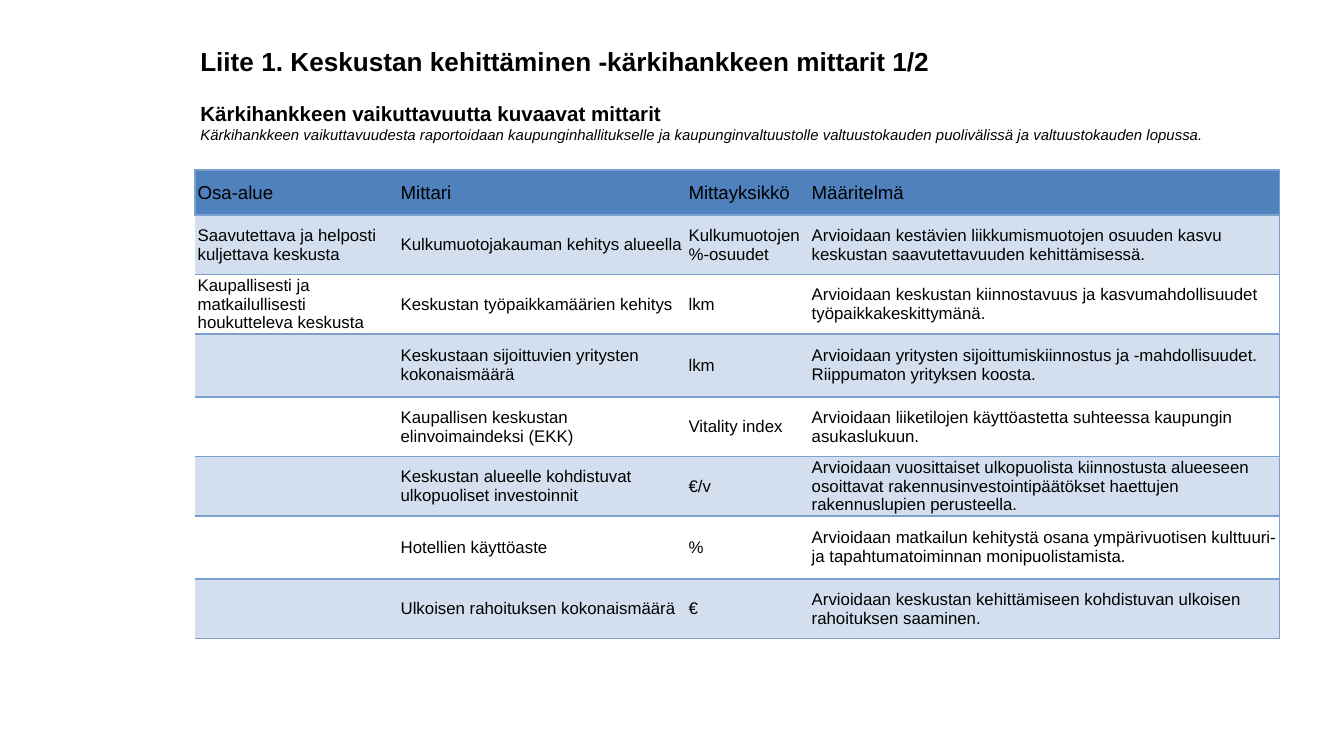
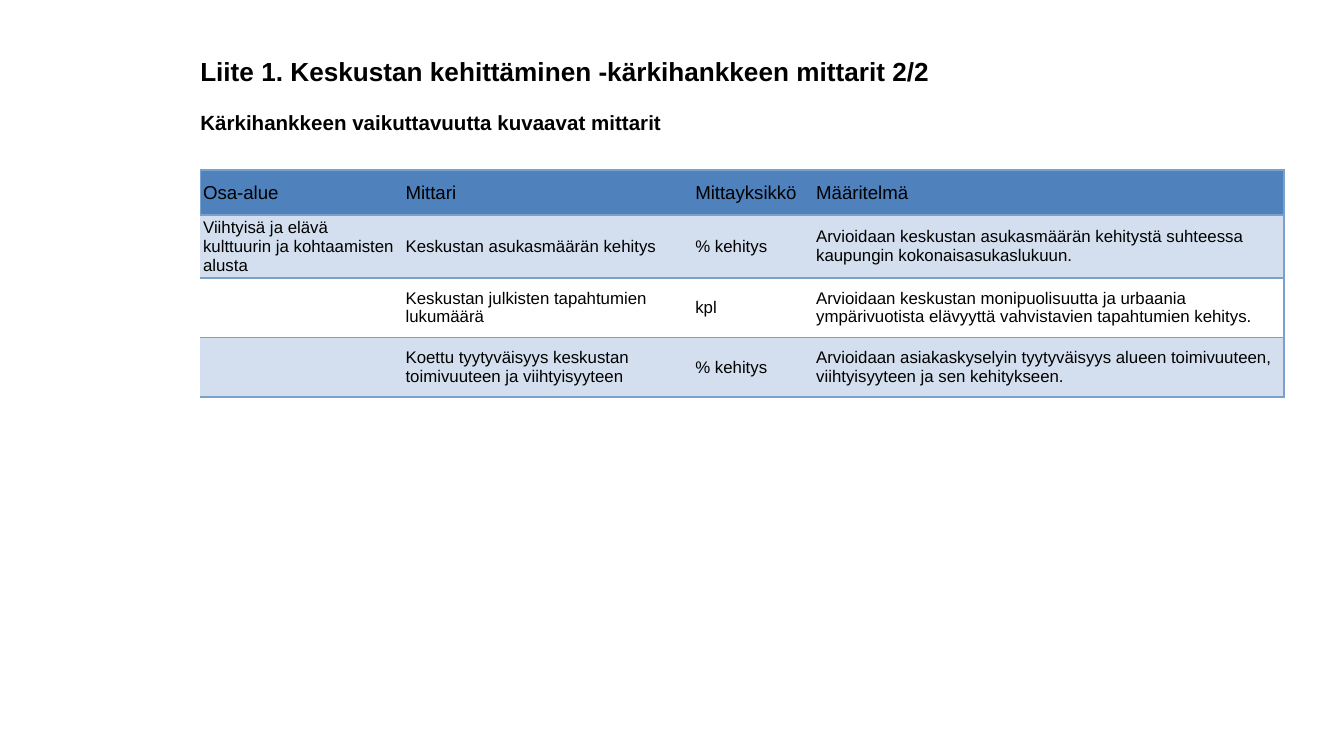
from pptx import Presentation
from pptx.dml.color import RGBColor
from pptx.enum.text import MSO_ANCHOR as Anchor, MSO_AUTO_SIZE as AutoSize, PP_ALIGN as Align
from pptx.oxml import parse_xml
from pptx.oxml.ns import nsdecls
from pptx.util import Pt

BLACK = RGBColor(0x00, 0x00, 0x00)
HEADER_BLUE = RGBColor(0x4F, 0x81, 0xBD)
BAND_BLUE = RGBColor(0xD3, 0xDF, 0xEE)
BORDER_BLUE = RGBColor(0x7B, 0xA0, 0xCD)

FONT = "Arial"
TITLE_FORMAT = {"size": Pt(14), "bold": True, "italic": False}
SUBTITLE_FORMAT = {"size": Pt(11), "bold": True, "italic": False}
NOTE_FORMAT = {"size": Pt(8), "bold": False, "italic": True}
HEADER_FORMAT = {"size": Pt(10), "bold": False}
CELL_FORMAT = {"size": Pt(9), "bold": False}

HEADING_INSETS = {"margin_left": Pt(90), "margin_top": Pt(6.5),
                  "margin_right": Pt(5), "margin_bottom": Pt(5)}
CELL_INSETS = {"margin_left": Pt(1.4), "margin_top": Pt(0.5),
               "margin_right": Pt(1.4), "margin_bottom": Pt(0.5)}

SUBTITLE = "Kärkihankkeen vaikuttavuutta kuvaavat mittarit"
HEADERS = ["Osa-alue", "Mittari", "Mittayksikkö", "Määritelmä"]
TABLE_TOP = 91.2
HEADER_HEIGHT = 24
LOW_ROW = 31.9
HIGH_ROW = 33.75


def apply_format(target, values):
    for name, value in values.items():
        setattr(target, name, value)


class MetricsDeck:
    def __init__(self):
        self.presentation = Presentation()
        self.presentation.slide_width = Pt(720)
        self.presentation.slide_height = Pt(405)
        self.slide = None

    def add_slide(self):
        layout = self.presentation.slide_layouts.get_by_name("Title Only")
        self.slide = self.presentation.slides.add_slide(layout)

    def add_text(self, paragraph, text, values):
        paragraph.alignment = Align.LEFT
        run = paragraph.add_run()
        run.text = text
        apply_format(run.font, {"name": FONT, **values})
        run.font.color.rgb = BLACK

    def add_heading(self, top, width, height, lines):
        shape = self.slide.shapes.title
        apply_format(shape, {"left": Pt(17.3), "top": Pt(top),
                             "width": Pt(width), "height": Pt(height)})
        frame = shape.text_frame
        apply_format(frame, {"word_wrap": True, "auto_size": AutoSize.NONE,
                             "vertical_anchor": Anchor.TOP, **HEADING_INSETS})
        for index, (text, values) in enumerate(lines):
            paragraph = frame.add_paragraph() if index else frame.paragraphs[0]
            self.add_text(paragraph, text, values)
            if index == 1:
                paragraph.space_before = Pt(12.7)

    def add_borders(self, cell, visible_sides):
        properties = cell._tc.get_or_add_tcPr()
        for side in "LRTB":
            paint = (f'<a:solidFill><a:srgbClr val="{BORDER_BLUE}"/></a:solidFill>'
                     if side in visible_sides else "<a:noFill/>")
            properties.append(parse_xml(
                f'<a:ln{side} {nsdecls("a")} w="{Pt(1)}">{paint}</a:ln{side}>'))

    def add_metrics_table(self, left, column_widths, row_heights, metrics):
        heights = [HEADER_HEIGHT, *row_heights]
        rows = [HEADERS, *metrics]
        table = self.slide.shapes.add_table(
            len(rows), len(HEADERS), Pt(left), Pt(TABLE_TOP),
            Pt(sum(column_widths)), Pt(sum(heights))).table
        apply_format(table, {"first_row": False, "horz_banding": False})
        for column, width in zip(table.columns, column_widths):
            column.width = Pt(width)
        for row_index, (row, height, texts) in enumerate(zip(table.rows, heights, rows)):
            row.height = Pt(height)
            for column_index, (cell, text) in enumerate(zip(row.cells, texts)):
                self.fill_cell(cell, text, row_index, column_index)

    def fill_cell(self, cell, text, row_index, column_index):
        is_header = row_index == 0
        apply_format(cell, {"vertical_anchor": Anchor.MIDDLE, **CELL_INSETS})
        sides = "TB"
        if is_header and column_index == 0:
            sides += "L"
        if column_index == len(HEADERS) - 1:
            sides += "R"
        self.add_borders(cell, sides)
        if row_index and row_index % 2 == 0:
            cell.fill.background()
        else:
            cell.fill.solid()
            cell.fill.fore_color.rgb = HEADER_BLUE if is_header else BAND_BLUE
        if text:
            self.add_text(cell.text_frame.paragraphs[0], text,
                          HEADER_FORMAT if is_header else CELL_FORMAT)


def add_first_slide(deck):
    deck.add_slide()
    deck.add_heading(18, 668, 77, [
        ("Liite 1. Keskustan kehittäminen -kärkihankkeen mittarit 1/2", TITLE_FORMAT),
        (SUBTITLE, SUBTITLE_FORMAT),
        ("Kärkihankkeen vaikuttavuudesta raportoidaan kaupunginhallitukselle ja "
         "kaupunginvaltuustolle valtuustokauden puolivälissä ja valtuustokauden lopussa.",
         NOTE_FORMAT),
    ])
    deck.add_metrics_table(
        104.5, [108.75, 154.25, 66, 252],
        [LOW_ROW, LOW_ROW, HIGH_ROW, LOW_ROW, LOW_ROW, HIGH_ROW, LOW_ROW], [
            ["Saavutettava ja helposti kuljettava keskusta",
             "Kulkumuotojakauman kehitys alueella", "Kulkumuotojen %-osuudet",
             "Arvioidaan kestävien liikkumismuotojen osuuden kasvu keskustan "
             "saavutettavuuden kehittämisessä."],
            ["Kaupallisesti ja matkailullisesti houkutteleva keskusta",
             "Keskustan työpaikkamäärien kehitys", "lkm",
             "Arvioidaan keskustan kiinnostavuus ja kasvumahdollisuudet "
             "työpaikkakeskittymänä."],
            ["", "Keskustaan sijoittuvien yritysten kokonaismäärä", "lkm",
             "Arvioidaan yritysten sijoittumiskiinnostus ja -mahdollisuudet. "
             "Riippumaton yrityksen koosta."],
            ["", "Kaupallisen keskustan elinvoimaindeksi (EKK)", "Vitality index",
             "Arvioidaan liiketilojen käyttöastetta suhteessa kaupungin asukaslukuun."],
            ["", "Keskustan alueelle kohdistuvat ulkopuoliset investoinnit", "€/v",
             "Arvioidaan vuosittaiset ulkopuolista kiinnostusta alueeseen osoittavat "
             "rakennusinvestointipäätökset haettujen rakennuslupien perusteella."],
            ["", "Hotellien käyttöaste", "%",
             "Arvioidaan matkailun kehitystä osana ympärivuotisen kulttuuri- ja "
             "tapahtumatoiminnan monipuolistamista."],
            ["", "Ulkoisen rahoituksen kokonaismäärä", "€",
             "Arvioidaan keskustan kehittämiseen kohdistuvan ulkoisen rahoituksen "
             "saaminen."],
        ])


def add_second_slide(deck):
    deck.add_slide()
    deck.add_heading(23, 530.5, 67, [
        ("Liite 1. Keskustan kehittäminen -kärkihankkeen mittarit 2/2", TITLE_FORMAT),
        (SUBTITLE, SUBTITLE_FORMAT),
    ])
    deck.add_metrics_table(
        107.4, [108.5, 155.25, 64.75, 252], [HIGH_ROW, LOW_ROW, LOW_ROW], [
            ["Viihtyisä ja elävä kulttuurin ja kohtaamisten alusta",
             "Keskustan asukasmäärän kehitys", "% kehitys",
             "Arvioidaan keskustan asukasmäärän kehitystä suhteessa kaupungin "
             "kokonaisasukaslukuun."],
            ["", "Keskustan julkisten tapahtumien lukumäärä", "kpl",
             "Arvioidaan keskustan monipuolisuutta ja urbaania ympärivuotista "
             "elävyyttä vahvistavien tapahtumien kehitys."],
            ["", "Koettu tyytyväisyys keskustan toimivuuteen ja viihtyisyyteen",
             "% kehitys",
             "Arvioidaan asiakaskyselyin tyytyväisyys alueen toimivuuteen, "
             "viihtyisyyteen ja sen kehitykseen."],
        ])


def main():
    deck = MetricsDeck()
    add_first_slide(deck)
    add_second_slide(deck)
    deck.presentation.save("out.pptx")


if __name__ == "__main__":
    main()
